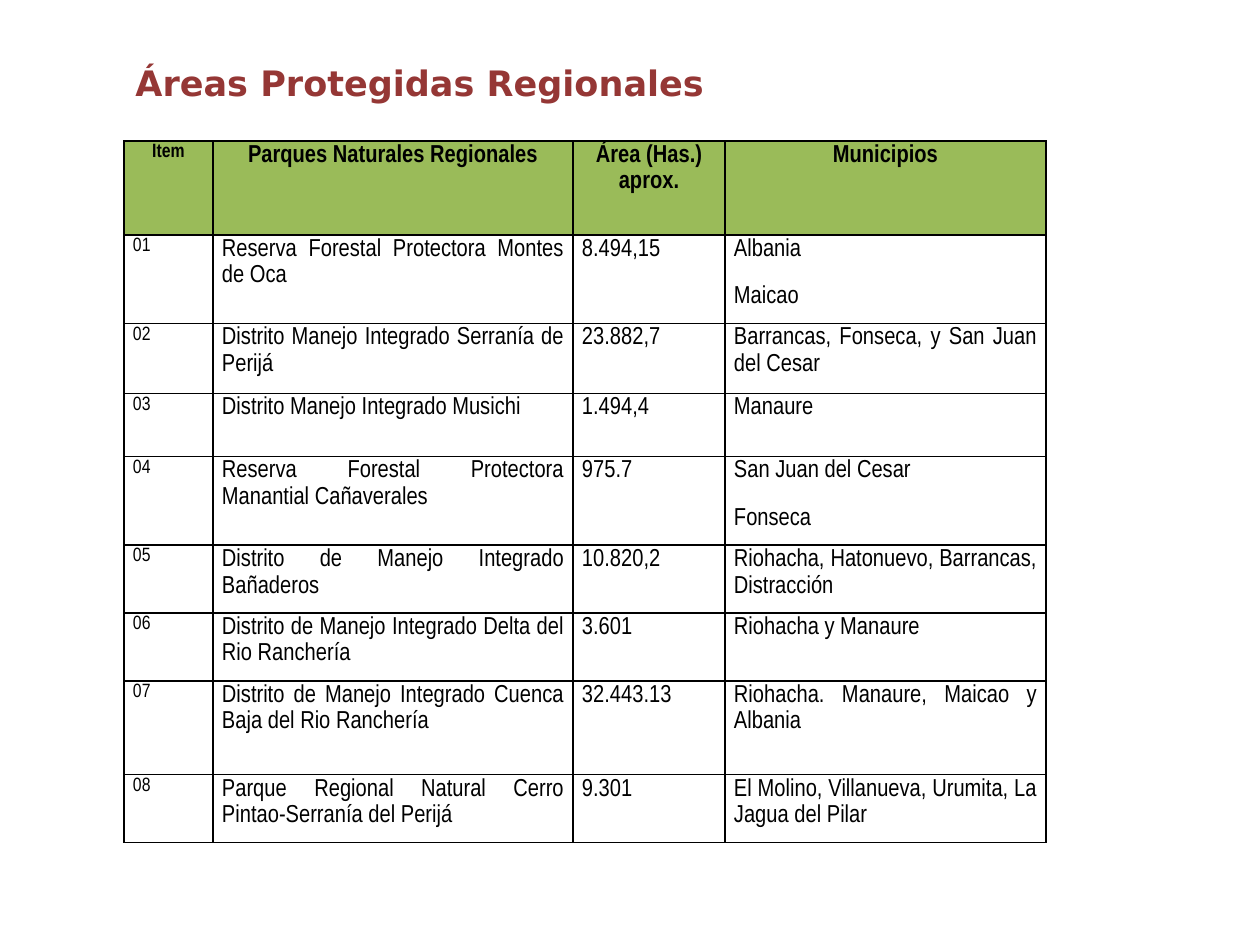
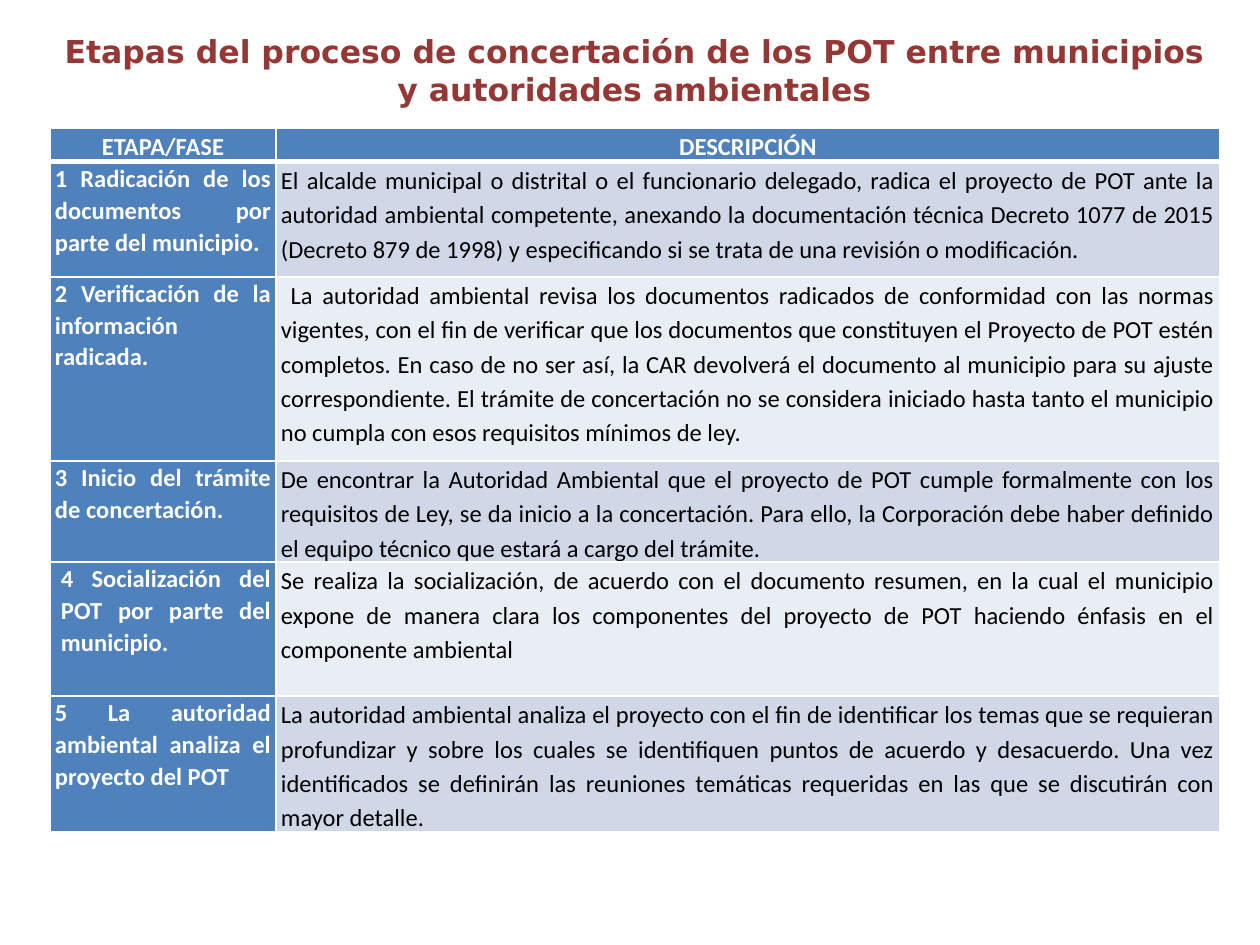
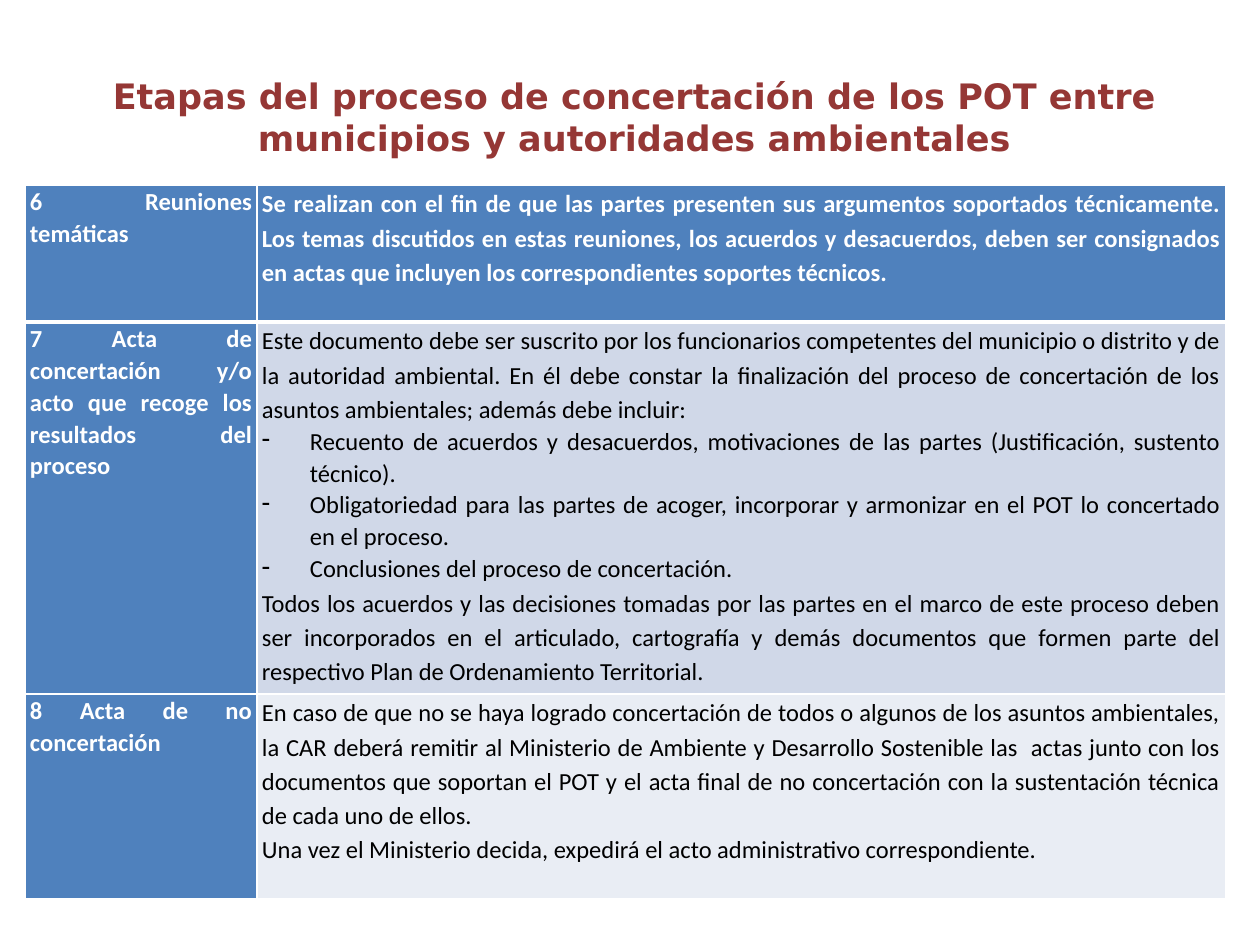
from pptx import Presentation
from pptx.dml.color import RGBColor
from pptx.enum.text import MSO_AUTO_SIZE, PP_ALIGN
from pptx.oxml import parse_xml
from pptx.oxml.ns import nsdecls
from pptx.util import Pt

PX = 914400 / 126
GROW = MSO_AUTO_SIZE.SHAPE_TO_FIT_TEXT
MID, JUST = PP_ALIGN.CENTER, PP_ALIGN.JUSTIFY

WINE = RGBColor(0x95, 0x37, 0x35)
GREEN = RGBColor(0x9A, 0xBB, 0x59)
BLUE = RGBColor(0x4F, 0x81, 0xBD)
BANDS = RGBColor(0xD0, 0xD8, 0xE8), RGBColor(0xE9, 0xED, 0xF4)
BLACK = RGBColor(0, 0, 0)
WHITE = RGBColor(0xFF, 0xFF, 0xFF)

HEAD_FONT, BODY_FONT, SLIM_FONT = "DejaVu Sans", "Calibri", "Arial Narrow"
DASH_GAP = 48

STAGES_TITLE = ("Etapas del proceso de concertación de los POT entre municipios "
                "y autoridades ambientales")

PARKS = [
    ("Item", "Parques Naturales Regionales", "Área (Has.) aprox.", "Municipios"),
    ("01", "Reserva Forestal Protectora Montes de Oca", "8.494,15", "Albania\nMaicao"),
    ("02", "Distrito Manejo Integrado Serranía de Perijá", "23.882,7",
     "Barrancas, Fonseca, y San Juan del Cesar"),
    ("03", "Distrito Manejo Integrado Musichi", "1.494,4", "Manaure"),
    ("04", "Reserva Forestal Protectora Manantial Cañaverales", "975.7",
     "San Juan del Cesar\nFonseca"),
    ("05", "Distrito de Manejo Integrado Bañaderos", "10.820,2",
     "Riohacha, Hatonuevo, Barrancas, Distracción"),
    ("06", "Distrito de Manejo Integrado Delta del Rio Ranchería", "3.601",
     "Riohacha y Manaure"),
    ("07", "Distrito de Manejo Integrado Cuenca Baja del Rio Ranchería", "32.443.13",
     "Riohacha. Manaure, Maicao y Albania"),
    ("08", "Parque Regional Natural Cerro Pintao-Serranía del Perijá", "9.301",
     "El Molino, Villanueva, Urumita, La Jagua del Pilar"),
]

FIRST_STAGES = [
    ("ETAPA/FASE", "DESCRIPCIÓN"),
    ("1 Radicación de los documentos por parte del municipio.",
     "El alcalde municipal o distrital o el funcionario delegado, radica el proyecto de "
     "POT ante la autoridad ambiental competente, anexando la documentación técnica "
     "Decreto 1077 de 2015 (Decreto 879 de 1998) y especificando si se trata de una "
     "revisión o modificación."),
    ("2 Verificación de la información radicada.",
     " La autoridad ambiental revisa los documentos radicados de conformidad con las "
     "normas vigentes, con el fin de verificar que los documentos que constituyen el "
     "Proyecto de POT estén completos. En caso de no ser así, la CAR devolverá el "
     "documento al municipio para su ajuste correspondiente. El trámite de concertación "
     "no se considera iniciado hasta tanto el municipio no cumpla con esos requisitos "
     "mínimos de ley."),
    ("3 Inicio del trámite de concertación.",
     "De encontrar la Autoridad Ambiental que el proyecto de POT cumple formalmente con "
     "los requisitos de Ley, se da inicio a la concertación. Para ello, la Corporación "
     "debe haber definido el equipo técnico que estará a cargo del trámite."),
    ("4 Socialización del POT por parte del municipio.",
     "Se realiza la socialización, de acuerdo con el documento resumen, en la cual el "
     "municipio expone de manera clara los componentes del proyecto de POT haciendo "
     "énfasis en el componente ambiental"),
    ("5 La autoridad ambiental analiza el proyecto del POT",
     "La autoridad ambiental analiza el proyecto con el fin de identificar los temas que "
     "se requieran profundizar y sobre los cuales se identifiquen puntos de acuerdo y "
     "desacuerdo. Una vez identificados se definirán las reuniones temáticas requeridas "
     "en las que se discutirán con mayor detalle."),
]

LAST_STAGES = [
    ("6 Reuniones temáticas",
     "Se realizan con el fin de que las partes presenten sus argumentos soportados "
     "técnicamente. Los temas discutidos en estas reuniones, los acuerdos y desacuerdos, "
     "deben ser consignados en actas que incluyen los correspondientes soportes técnicos."),
    ("7 Acta de concertación  y/o acto que recoge los resultados del proceso",
     "Este documento debe ser suscrito por los funcionarios competentes del municipio o "
     "distrito y de la autoridad ambiental. En él debe constar la finalización del "
     "proceso de concertación de los asuntos ambientales; además debe incluir:\n"
     "- Recuento de acuerdos y desacuerdos, motivaciones de las partes (Justificación, "
     "sustento técnico).\n"
     "- Obligatoriedad para las partes de acoger, incorporar y armonizar en el POT lo "
     "concertado en el proceso.\n"
     "- Conclusiones del proceso de concertación.\n"
     "Todos los acuerdos y las decisiones tomadas por las partes en el marco de este "
     "proceso deben ser incorporados en el articulado, cartografía y demás documentos "
     "que formen parte del respectivo Plan de Ordenamiento Territorial."),
    ("8 Acta de no concertación",
     "En caso de que no se haya logrado concertación de todos o algunos de los asuntos "
     "ambientales, la CAR deberá remitir al Ministerio de Ambiente y Desarrollo "
     "Sostenible las  actas junto con los documentos que soportan el POT y el acta final "
     "de no concertación con la sustentación técnica de cada uno de ellos.\n"
     "Una vez el Ministerio decida, expedirá el acto administrativo correspondiente."),
]


def emu(px):
    return round(px * PX)


def dash(para):
    props = para._p.get_or_add_pPr()
    props.set("marL", str(emu(DASH_GAP)))
    props.set("indent", str(-emu(DASH_GAP)))
    props.append(parse_xml(f'<a:buChar {nsdecls("a")} char="-"/>'))


def write(frame, text, font=BODY_FONT, size=14, color=BLACK, bold=False,
          align=JUST, lines=None, gap=None):
    """Write one paragraph per line; a line that opens with "- " is a list item."""
    for i, line in enumerate(text.split("\n")):
        para = frame.paragraphs[0] if i == 0 else frame.add_paragraph()
        para.alignment = align
        para.line_spacing = lines
        if gap:
            para.space_after = Pt(gap)
            if i:
                para.space_before = Pt(gap)
        if line.startswith("- "):
            line = line[2:]
            para.line_spacing = 1.07
            dash(para)
        run = para.add_run()
        run.text = line
        run.font.name, run.font.size = font, Pt(size)
        run.font.bold, run.font.color.rgb = bold, color


def edge(cell, color, base=1):
    """Draw all four sides at 1 pt, save the bottom one at base pt."""
    props = cell._tc.get_or_add_tcPr()
    for i, (side, width) in enumerate((("L", 1), ("R", 1), ("T", 1), ("B", base))):
        props.insert(i, parse_xml(
            f'<a:ln{side} {nsdecls("a")} w="{Pt(width)}"><a:solidFill>'
            f'<a:srgbClr val="{color}"/></a:solidFill></a:ln{side}>'))


class Deck:
    def __init__(self):
        self.show = Presentation()
        self.show.slide_width, self.show.slide_height = emu(1260), emu(945)
        self.slide = None

    def page(self):
        self.slide = self.show.slides.add_slide(self.show.slide_layouts[6])

    def title(self, text, box, size=20, align=MID):
        frame = self.slide.shapes.add_textbox(*map(emu, box)).text_frame
        frame.word_wrap = True
        frame.auto_size = GROW
        write(frame, text, font=HEAD_FONT, size=size, color=WINE, bold=True, align=align)

    def grid(self, left, top, cols, rows):
        """Add a plain table and return it."""
        table = self.slide.shapes.add_table(
            len(rows), len(cols), emu(left), emu(top),
            emu(sum(cols)), emu(sum(rows))).table
        table.first_row = table.horz_banding = False
        for col, width in zip(table.columns, cols):
            col.width = emu(width)
        for row, height in zip(table.rows, rows):
            row.height = emu(height)
        return table

    def cell(self, cell, text, fill, line, pad, base=1, inset=None, **style):
        cell.margin_left, cell.margin_right = emu(inset or pad), emu(pad)
        cell.margin_top = cell.margin_bottom = 0
        if fill is None:
            cell.fill.background()
        else:
            cell.fill.solid()
            cell.fill.fore_color.rgb = fill
        edge(cell, line, base)
        write(cell.text_frame, text, **style)

    def parks(self, data, left, top, cols, rows):
        table = self.grid(left, top, cols, rows)
        for r, row in enumerate(data):
            for c, text in enumerate(row):
                self.cell(table.cell(r, c), text, None if r else GREEN, BLACK, 9,
                          font=SLIM_FONT, size=14 if c else 11, bold=r == 0,
                          align=JUST if r else MID, lines=1.15, gap=6)

    def stages(self, data, left, top, cols, rows, align=JUST, insets=None):
        """Fill a stage table; align is that of the top row, insets go by row."""
        table = self.grid(left, top, cols, rows)
        for r, row in enumerate(data):
            for c, text in enumerate(row):
                dark = r == 0 or c == 0
                side = c == 0 and (r > 0 or align == JUST)
                self.cell(table.cell(r, c), text, BLUE if dark else BANDS[(r - 1) % 2],
                          WHITE, 5, base=1 if r else 3,
                          inset=(insets or {}).get(r) if c == 0 else None,
                          color=WHITE if dark else BLACK, bold=dark,
                          align=JUST if r else align, lines=1.07 if side else 1.15)


def main():
    deck = Deck()

    deck.page()
    deck.title("Áreas Protegidas Regionales", (123, 55, 853, 55), align=JUST)
    deck.parks(PARKS, 124, 141, (89, 360, 152, 321),
               (94, 88, 70, 63, 88, 67, 68, 94, 67))

    deck.page()
    deck.stages(FIRST_STAGES, 50, 128, (226, 944), (33, 115, 184, 101, 134, 135),
                align=MID, insets={4: 11})
    deck.title(STAGES_TITLE, (44, 26, 1181, 89), size=18)

    deck.page()
    deck.stages(LAST_STAGES, 25, 185, (232, 969), (137, 372, 205))
    deck.title(STAGES_TITLE, (44, 68, 1181, 97))

    deck.show.save("out.pptx")


if __name__ == "__main__":
    main()
